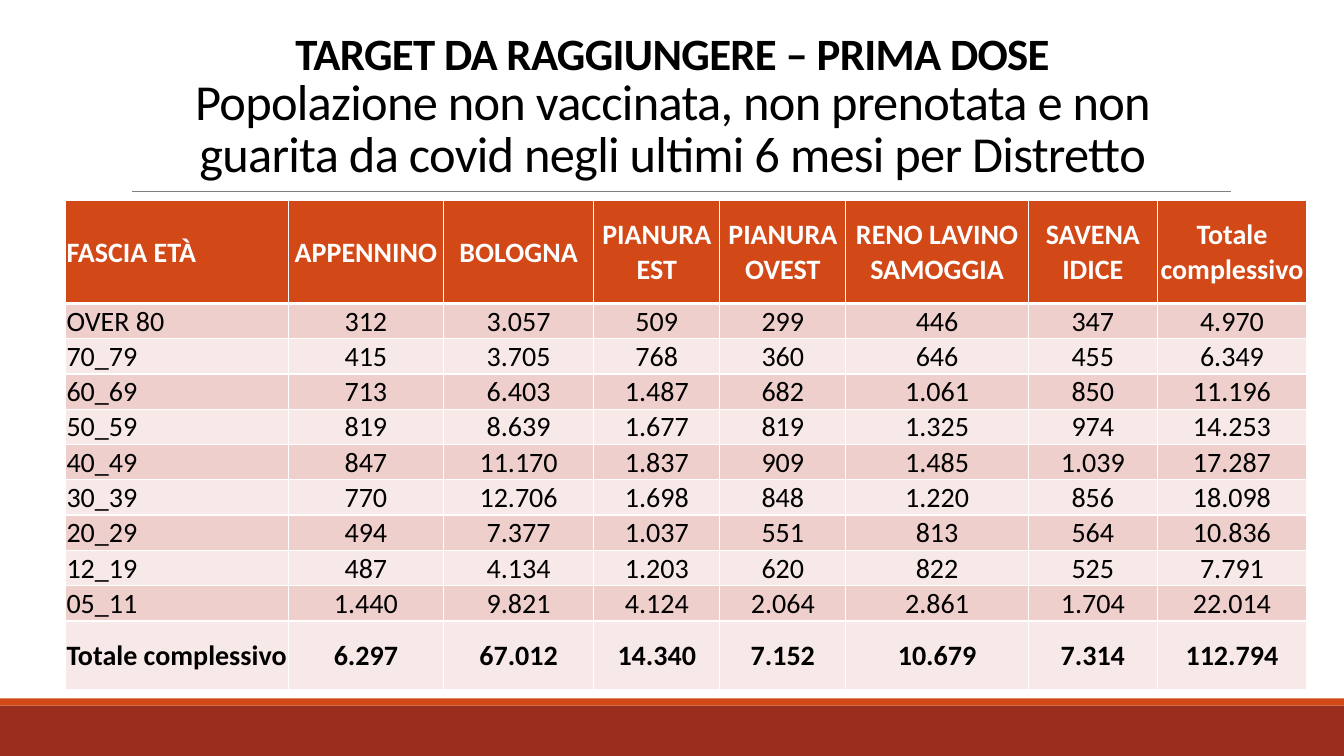
import dataclasses

import lxml.etree
import pptx
import pptx.dml.color
import pptx.enum.shapes
import pptx.enum.text
import pptx.oxml.ns
import pptx.util

Inches = pptx.util.Inches
Pt = pptx.util.Pt
Anchor = pptx.enum.text.MSO_ANCHOR
Align = pptx.enum.text.PP_ALIGN

COLORS = {
    "brick": "9B2D1F",
    "orange": "D34817",
    "rule": "808080",
    "dark_band": "EFCFCC",
    "light_band": "F7E9E8",
    "black": "000000",
    "white": "FFFFFF",
}
FONT = "Calibri"

DISTRICTS = [
    "FASCIA ETÀ", "APPENNINO", "BOLOGNA", "PIANURA EST", "PIANURA OVEST",
    "RENO LAVINO SAMOGGIA", "SAVENA IDICE", "Totale complessivo",
]
AGE_GROUPS = [
    ["OVER 80", "312", "3.057", "509", "299", "446", "347", "4.970"],
    ["70_79", "415", "3.705", "768", "360", "646", "455", "6.349"],
    ["60_69", "713", "6.403", "1.487", "682", "1.061", "850", "11.196"],
    ["50_59", "819", "8.639", "1.677", "819", "1.325", "974", "14.253"],
    ["40_49", "847", "11.170", "1.837", "909", "1.485", "1.039", "17.287"],
    ["30_39", "770", "12.706", "1.698", "848", "1.220", "856", "18.098"],
    ["20_29", "494", "7.377", "1.037", "551", "813", "564", "10.836"],
    ["12_19", "487", "4.134", "1.203", "620", "822", "525", "7.791"],
    ["05_11", "1.440", "9.821", "4.124", "2.064", "2.861", "1.704", "22.014"],
]
TOTALS = [
    "Totale complessivo", "6.297", "67.012", "14.340", "7.152", "10.679", "7.314", "112.794",
]
COLUMN_WIDTHS = [2.21, 1.54, 1.49, 1.25, 1.25, 1.81, 1.28, 1.48]


@dataclasses.dataclass
class FooterBand:
    top: float
    height: float
    color: str


@dataclasses.dataclass
class RowStyle:
    height: float
    fill: str
    color: str = "black"
    bold: bool = False
    label_anchor: Anchor = Anchor.MIDDLE
    bottom_border: float = 1


FOOTER_BANDS = [FooterBand(7, 0.5, "brick"), FooterBand(6.93, 0.07, "orange")]


def rgb(name: str) -> pptx.dml.color.RGBColor:
    return pptx.dml.color.RGBColor.from_string(COLORS[name])


def style_run(run, size: float, color: str, bold: bool) -> None:
    run.font.name = FONT
    run.font.size = Pt(size)
    run.font.bold = bold
    run.font.color.rgb = rgb(color)


def draw_band(slide, band: FooterBand) -> None:
    strip = slide.shapes.add_shape(
        pptx.enum.shapes.MSO_SHAPE.RECTANGLE,
        0, Inches(band.top), Inches(13.33), Inches(band.height),
    )
    strip.shadow.inherit = False
    strip.fill.solid()
    strip.fill.fore_color.rgb = rgb(band.color)
    strip.line.fill.background()


def draw_title_rule(slide) -> None:
    rule = slide.shapes.add_connector(
        pptx.enum.shapes.MSO_CONNECTOR.STRAIGHT,
        Inches(1.31), Inches(1.9), Inches(12.21), Inches(1.9),
    )
    rule.line.color.rgb = rgb("rule")
    rule.line.width = Pt(0.5)
    lxml.etree.SubElement(rule.element.spPr, pptx.oxml.ns.qn("a:effectLst"))


def draw_title(slide) -> None:
    title = slide.shapes.add_textbox(Inches(1.17), Inches(0.27), Inches(11), Inches(1.59)).text_frame
    title.word_wrap = True
    title.vertical_anchor = Anchor.BOTTOM
    title.text = (
        "TARGET DA RAGGIUNGERE – PRIMA DOSE\v"
        "Popolazione non vaccinata, non prenotata e non guarita da covid "
        "negli ultimi 6 mesi per Distretto"
    )
    heading = title.paragraphs[0]
    heading.alignment = Align.CENTER
    heading.line_spacing = 0.85
    for run, size, bold in zip(heading.runs, (32, 36), (True, False)):
        style_run(run, size, "black", bold)
        run.font._element.set("spc", "-50")


def set_borders(cell, bottom: float) -> None:
    properties = cell._tc.get_or_add_tcPr()
    widths = {"a:lnL": 1, "a:lnR": 1, "a:lnT": 1, "a:lnB": bottom}
    for position, (side, width) in enumerate(widths.items()):
        border = lxml.etree.Element(pptx.oxml.ns.qn(side), w=str(Pt(width)))
        fill = lxml.etree.SubElement(border, pptx.oxml.ns.qn("a:solidFill"))
        lxml.etree.SubElement(fill, pptx.oxml.ns.qn("a:srgbClr"), val=COLORS["white"])
        properties.insert(position, border)


def fill_cell(cell, text: str, style: RowStyle, is_label: bool) -> None:
    cell.margin_left = cell.margin_right = cell.margin_top = Inches(0.01)
    cell.margin_bottom = 0
    cell.vertical_anchor = style.label_anchor if is_label else Anchor.MIDDLE
    cell.fill.solid()
    cell.fill.fore_color.rgb = rgb(style.fill)
    cell.text_frame.text = text
    paragraph = cell.text_frame.paragraphs[0]
    paragraph.alignment = Align.LEFT if is_label else Align.CENTER
    style_run(paragraph.runs[0], 20, style.color, style.bold)
    set_borders(cell, style.bottom_border)


def draw_targets(slide) -> None:
    rows = [(DISTRICTS, RowStyle(1.02, "orange", "white", bold=True, bottom_border=3))]
    for index, group in enumerate(AGE_GROUPS):
        band = "light_band" if index % 2 else "dark_band"
        rows.append((group, RowStyle(0.35, band, label_anchor=Anchor.BOTTOM)))
    rows.append((TOTALS, RowStyle(0.68, "light_band", bold=True)))

    targets = slide.shapes.add_table(
        len(rows), len(DISTRICTS), Inches(0.65), Inches(1.99), Inches(12.3), Inches(4.82)
    ).table
    for column, width in zip(targets.columns, COLUMN_WIDTHS):
        column.width = Inches(width)
    for row, (values, style) in zip(targets.rows, rows):
        row.height = Inches(style.height)
        for index, (cell, value) in enumerate(zip(row.cells, values)):
            fill_cell(cell, value, style, is_label=index == 0)


def main() -> None:
    presentation = pptx.Presentation()
    presentation.slide_width = Inches(13.33)
    presentation.slide_height = Inches(7.5)
    slide = presentation.slides.add_slide(presentation.slide_layouts[6])
    for band in FOOTER_BANDS:
        draw_band(slide, band)
    draw_title_rule(slide)
    draw_title(slide)
    draw_targets(slide)
    presentation.save("out.pptx")


if __name__ == "__main__":
    main()
